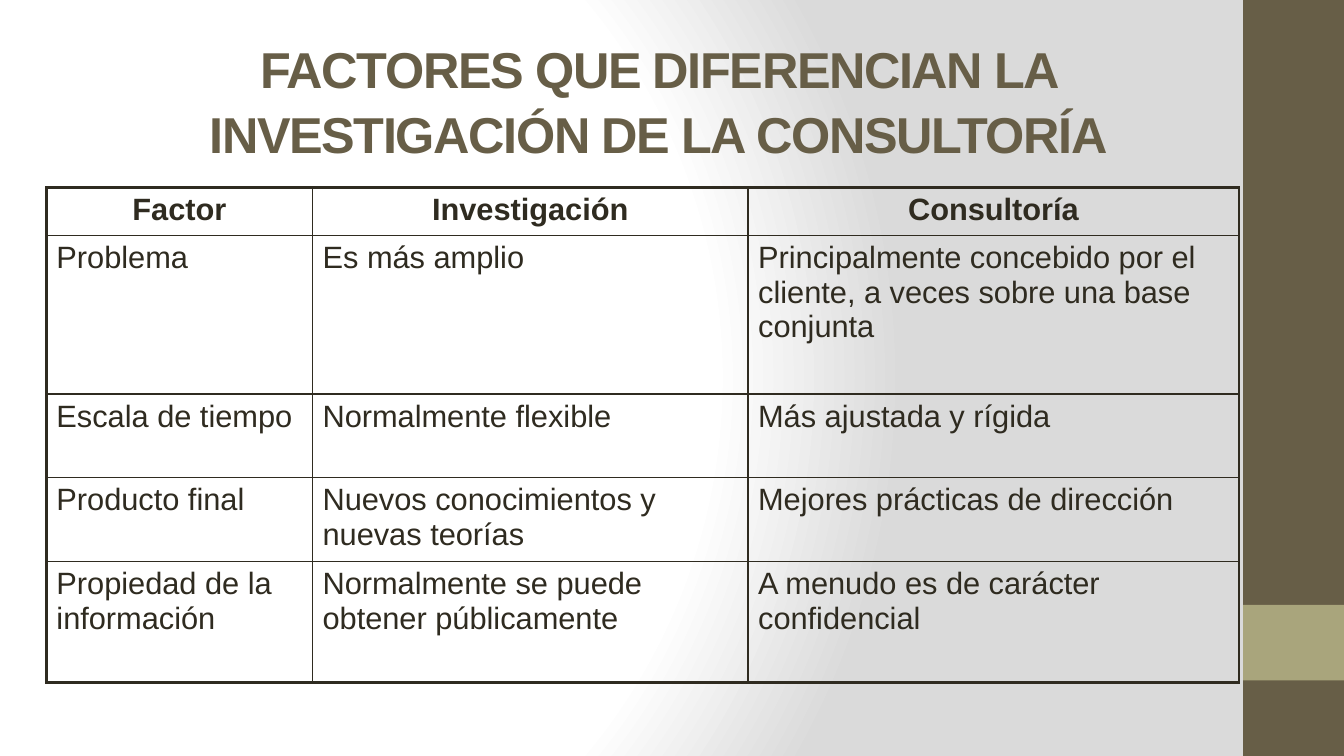
from dataclasses import dataclass

from lxml.etree import SubElement
from pptx import Presentation
from pptx.dml.color import RGBColor
from pptx.enum.shapes import MSO_SHAPE
from pptx.enum.text import MSO_ANCHOR, PP_ALIGN
from pptx.oxml import parse_xml
from pptx.oxml.ns import nsdecls, qn
from pptx.util import Inches, Pt

# Content
TITLE = "FACTORES QUE DIFERENCIAN LA INVESTIGACIÓN DE LA CONSULTORÍA"
ROWS = [
    ("Factor", "Investigación", "Consultoría"),
    ("Problema", "Es más amplio",
     "Principalmente concebido por el cliente, a veces sobre una base conjunta"),
    ("Escala de tiempo", "Normalmente flexible", "Más ajustada y rígida"),
    ("Producto final", "Nuevos conocimientos y nuevas teorías",
     "Mejores prácticas de dirección"),
    ("Propiedad de la información", "Normalmente se puede obtener públicamente",
     "A menudo es de carácter confidencial"),
]

# Layout, in inches
WIDTH, HEIGHT = 13.33, 7.5
BAND_WIDTH = 1
BANDS = [(0, HEIGHT, "band"), (0.8 * HEIGHT, 0.1 * HEIGHT, "accent")]
TITLE_BOX = (1.67, 0.28, 9.73, 1.5)
TABLE_LEFT, TABLE_TOP = 0.46, 1.86
COLUMN_WIDTHS = (2.64, 4.32, 4.87)
ROW_HEIGHTS = (0.48, 1.57, 0.83, 0.83, 1.2)


@dataclass(frozen=True)
class Theme:
    font: str = "Arial"
    band: str = "675E47"
    accent: str = "A9A57C"
    ink: str = "2F2B20"
    light: str = "FFFFFF"
    shade: str = "DADADA"
    title_size: float = 36
    cell_size: float = 22
    outer_line: float = 2.25
    inner_line: float = 1


THEME = Theme()


def write(frame, text, *, size, color, bold=False, align=PP_ALIGN.LEFT,
          line_spacing=None, tracking=None):
    frame.word_wrap = True
    para = frame.paragraphs[0]
    para.alignment = align
    para.line_spacing = line_spacing
    span = para.add_run()
    span.text = text
    font = span.font
    font.name, font.size, font.bold = THEME.font, Pt(size), bold
    font.color.rgb = RGBColor.from_string(color)
    if tracking is not None:
        span._r.get_or_add_rPr().set("spc", str(round(tracking * 100)))


def paint_background(page):
    stops = "".join(
        f'<a:gs pos="{share * 1000}"><a:srgbClr val="{color}"/></a:gs>'
        for share, color in ((0, THEME.light), (75, THEME.light), (100, THEME.shade)))
    gradient = parse_xml(
        f'<a:gradFill {nsdecls("a")} rotWithShape="1"><a:gsLst>{stops}</a:gsLst>'
        '<a:path path="circle"><a:fillToRect l="20000" t="50000" r="100000" '
        'b="50000"/></a:path></a:gradFill>')
    page.background.fill.solid()
    solid = page._element.find(".//" + qn("p:bgPr")).find(qn("a:solidFill"))
    solid.getparent().replace(solid, gradient)


def add_bands(page):
    for top, height, color in BANDS:
        band = page.shapes.add_shape(
            MSO_SHAPE.RECTANGLE, Inches(WIDTH - BAND_WIDTH), Inches(top),
            Inches(BAND_WIDTH), Inches(height))
        band.shadow.inherit = False
        band.fill.solid()
        band.fill.fore_color.rgb = RGBColor.from_string(getattr(THEME, color))
        band.line.fill.background()


def add_title(page):
    box = page.shapes.add_textbox(*map(Inches, TITLE_BOX))
    box.text_frame.vertical_anchor = MSO_ANCHOR.TOP
    write(box.text_frame, TITLE, size=THEME.title_size, color=THEME.band, bold=True,
          align=PP_ALIGN.CENTER, line_spacing=1.08, tracking=-1)


def set_borders(cell, outer_sides):
    properties = cell._tc.get_or_add_tcPr()
    for index, side in enumerate("LRTB"):
        width = THEME.outer_line if side in outer_sides else THEME.inner_line
        line = SubElement(properties, qn(f"a:ln{side}"), w=str(int(Pt(width))))
        fill = SubElement(line, qn("a:solidFill"))
        SubElement(fill, qn("a:srgbClr"), val=THEME.ink)
        properties.remove(line)
        properties.insert(index, line)


def add_factor_table(page):
    last_row, last_column = len(ROWS) - 1, len(COLUMN_WIDTHS) - 1
    table = page.shapes.add_table(
        len(ROWS), len(COLUMN_WIDTHS), Inches(TABLE_LEFT), Inches(TABLE_TOP),
        Inches(sum(COLUMN_WIDTHS)), Inches(sum(ROW_HEIGHTS))).table
    table.horz_banding = False
    for column, width in zip(table.columns, COLUMN_WIDTHS):
        column.width = Inches(width)
    for row, height in zip(table.rows, ROW_HEIGHTS):
        row.height = Inches(height)
    for r, texts in enumerate(ROWS):
        for c, text in enumerate(texts):
            cell = table.cell(r, c)
            cell.fill.background()
            edges = {"L": c == 0, "R": c == last_column, "T": r == 0, "B": r == last_row}
            set_borders(cell, [side for side, outer in edges.items() if outer])
            write(cell.text_frame, text, size=THEME.cell_size, color=THEME.ink,
                  bold=r == 0, align=PP_ALIGN.CENTER if r == 0 else PP_ALIGN.LEFT)


def main():
    deck = Presentation()
    deck.slide_width, deck.slide_height = Inches(WIDTH), Inches(HEIGHT)
    page = deck.slides.add_slide(deck.slide_layouts[6])
    paint_background(page)
    add_bands(page)
    add_title(page)
    add_factor_table(page)
    deck.save("out.pptx")


if __name__ == "__main__":
    main()
